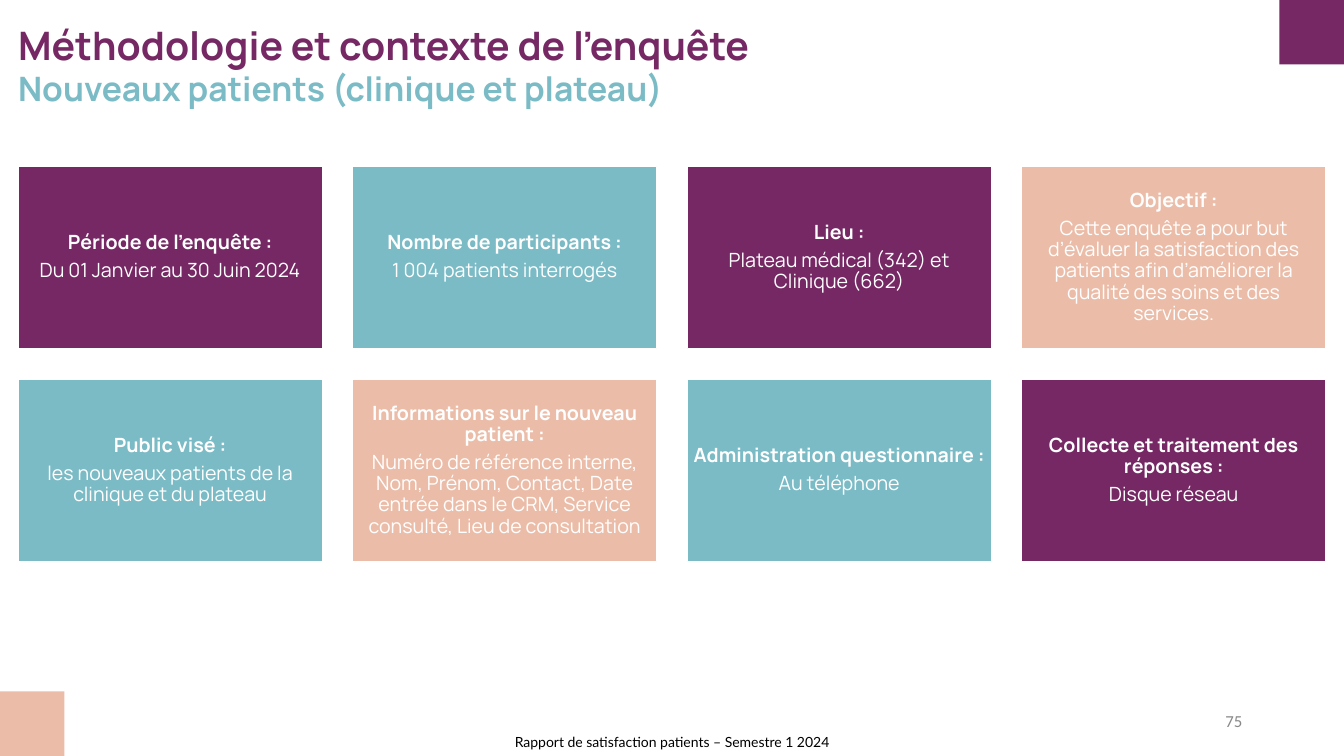
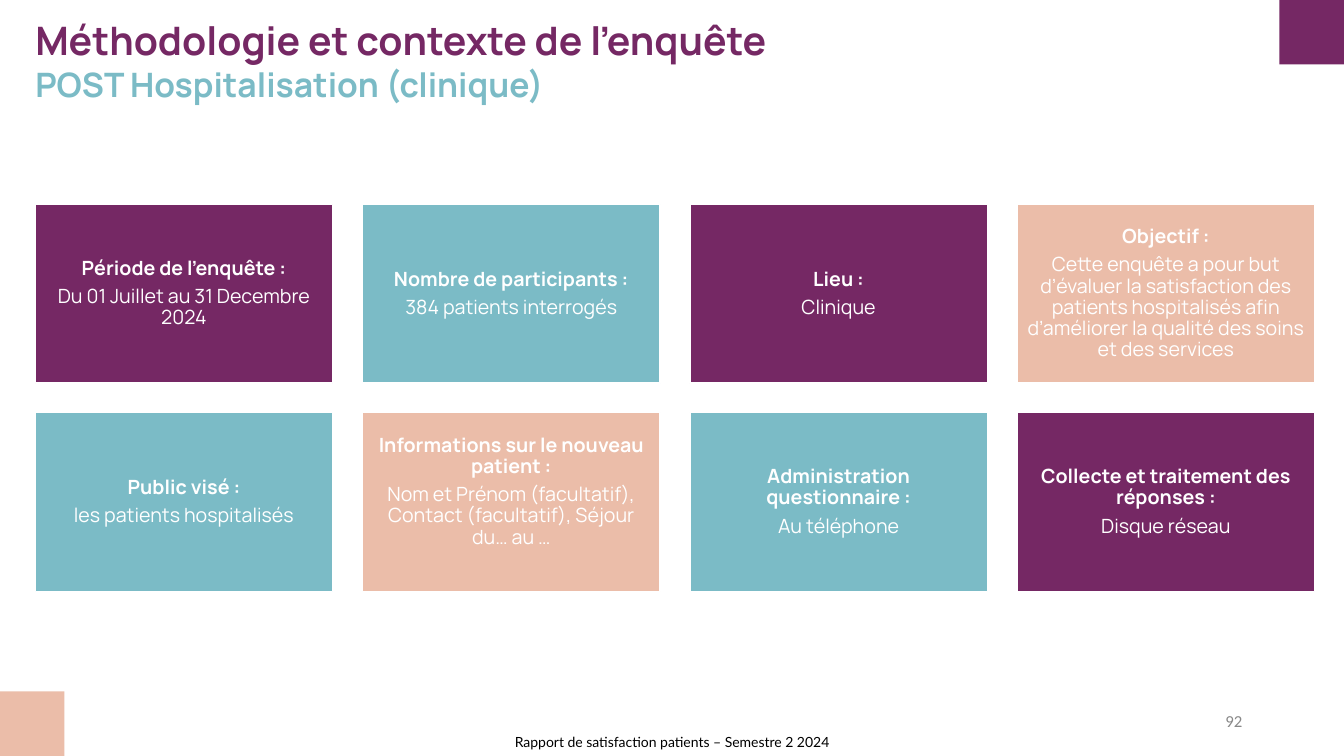
from dataclasses import dataclass

from pptx import Presentation
from pptx.dml.color import RGBColor
from pptx.enum.shapes import MSO_SHAPE
from pptx.enum.text import MSO_ANCHOR, PP_ALIGN
from pptx.util import Inches, Pt


@dataclass(frozen=True)
class Theme:
    plum: str = "752864"
    teal: str = "7BBBC6"
    salmon: str = "EBBDA9"
    white: str = "FFFFFF"
    black: str = "000000"
    grey: str = "888888"
    main_font: str = "Manrope"
    footer_font: str = "Lato"
    number_font: str = "Calibri"
    title: int = 28
    subtitle: int = 24
    card: int = 14
    number: int = 12
    footer: int = 10


T = Theme()
WIDTH, HEIGHT = 13.33, 7.5
CORNER = 0.64
COLUMNS = 4
GAP_SHARE = 0.1      # gap as a share of card width
CARD_RATIO = 0.6     # card height as a share of card width
CARD_INSET = 0.06

CARD_STYLES = [
    ("Période de l’enquête :", T.plum),
    ("Nombre de participants :", T.teal),
    ("Lieu :", T.plum),
    ("Objectif :", T.salmon),
    ("Public visé :", T.teal),
    ("Informations sur le nouveau patient :", T.salmon),
    ("Administration questionnaire :", T.teal),
    ("Collecte et traitement des réponses :", T.plum),
]

SLIDES = [
    dict(
        subtitle="Nouveaux patients (clinique et plateau)",
        title_at=(0.18, 0.2), cards_at=(0.18, 1.65), cards_width=12.97,
        footer="Rapport de satisfaction patients – Semestre 1 2024", number=75,
        bodies=[
            "Du 01 Janvier au 30 Juin 2024",
            "1 004 patients interrogés",
            "Plateau médical (342) et Clinique (662)",
            "Cette enquête a pour but d’évaluer la satisfaction des patients "
            "afin d’améliorer la qualité des soins et des services.",
            "les nouveaux patients de la clinique et du plateau",
            "Numéro de référence interne, Nom, Prénom, Contact, Date entrée "
            "dans le CRM, Service consulté, Lieu de consultation",
            "Au téléphone",
            "Disque réseau",
        ],
    ),
    dict(
        subtitle="POST Hospitalisation (clinique)",
        title_at=(0.35, 0.16), cards_at=(0.35, 2.03), cards_width=12.69,
        footer="Rapport de satisfaction patients – Semestre 2 2024", number=92,
        bodies=[
            "Du 01 Juillet au 31 Decembre 2024",
            "384 patients interrogés",
            "Clinique",
            "Cette enquête a pour but d’évaluer la satisfaction des patients "
            "hospitalisés afin d’améliorer la qualité des soins et des services",
            "les patients hospitalisés",
            "Nom et Prénom (facultatif), Contact (facultatif), Séjour du… au …",
            "Au téléphone",
            "Disque réseau",
        ],
        raised={5: 0.2},
    ),
]


def set_frame(tf, anchor, insets):
    """Wrap the frame; insets are left, top, right, bottom in inches."""
    tf.word_wrap = True
    tf.vertical_anchor = anchor
    (tf.margin_left, tf.margin_top,
     tf.margin_right, tf.margin_bottom) = map(Inches, insets)


def write(tf, text, *, size, color, font=T.main_font, bold=False,
          align=PP_ALIGN.LEFT, spacing=1.0, before=0):
    """Fill the first paragraph if it is free, otherwise append one."""
    p = tf.paragraphs[0]
    if p.runs:
        p = tf.add_paragraph()
    p.alignment, p.line_spacing = align, spacing
    p.space_before = Pt(before)
    r = p.add_run()
    r.text = text
    r.font.name, r.font.size, r.font.bold = font, Pt(size), bold
    r.font.color.rgb = RGBColor.from_string(color)


def add_rect(s, x, y, w, h, fill, line=None):
    sp = s.shapes.add_shape(MSO_SHAPE.RECTANGLE, *map(Inches, (x, y, w, h)))
    sp.shadow.inherit = False
    sp.fill.solid()
    sp.fill.fore_color.rgb = RGBColor.from_string(fill)
    if line:
        sp.line.color.rgb = RGBColor.from_string(line)
        sp.line.width = Pt(1)
    else:
        sp.line.fill.background()
    return sp


def add_label(s, box, anchor, text, **style):
    tf = s.shapes.add_textbox(*map(Inches, box)).text_frame
    set_frame(tf, anchor, (0.1, 0.05, 0.1, 0.05))
    write(tf, text, **style)


def place_title(s, x, y, subtitle):
    sp = s.shapes.title
    sp.left, sp.top, sp.width, sp.height = map(Inches, (x, y, 12.69, 0.88))
    tf = sp.text_frame
    set_frame(tf, MSO_ANCHOR.MIDDLE, (0, 0, 0, 0))
    write(tf, "Méthodologie et contexte de l’enquête",
          size=T.title, color=T.plum, bold=True)
    write(tf, subtitle, size=T.subtitle, color=T.teal, bold=True)


def add_corners(s):
    add_rect(s, WIDTH - CORNER, 0, CORNER, CORNER, T.plum)
    add_rect(s, 0, HEIGHT - CORNER, CORNER, CORNER, T.salmon)


def add_card(s, x, y, w, h, heading, body, fill, raised=0):
    tf = add_rect(s, x, y, w, h, fill, line=T.white).text_frame
    set_frame(tf, MSO_ANCHOR.MIDDLE, [CARD_INSET] * 3 + [CARD_INSET + raised])
    style = dict(size=T.card, color=T.white, align=PP_ALIGN.CENTER, spacing=0.9)
    write(tf, heading, bold=True, **style)
    write(tf, body, before=4.9, **style)


def add_card_grid(s, x, y, width, bodies, raised):
    w = width / (COLUMNS + (COLUMNS - 1) * GAP_SHARE)
    h, gap = w * CARD_RATIO, w * GAP_SHARE
    for i, ((heading, fill), body) in enumerate(zip(CARD_STYLES, bodies)):
        row, col = divmod(i, COLUMNS)
        add_card(s, x + col * (w + gap), y + row * (h + gap), w, h,
                 heading, body, fill, raised.get(i, 0))


def add_footer(s, text, number):
    add_label(s, (WIDTH / 4, 7.23, WIDTH / 2, 0.27), MSO_ANCHOR.TOP, text,
              size=T.footer, color=T.black, font=T.footer_font,
              align=PP_ALIGN.CENTER)
    add_label(s, (9.42, 6.95, 3, 0.4), MSO_ANCHOR.MIDDLE, str(number),
              size=T.number, color=T.grey, font=T.number_font,
              align=PP_ALIGN.RIGHT)


def add_method_slide(prs, *, subtitle, title_at, cards_at, cards_width,
                     footer, number, bodies, raised=None):
    s = prs.slides.add_slide(prs.slide_layouts.get_by_name("Title Only"))
    place_title(s, *title_at, subtitle)
    add_corners(s)
    add_card_grid(s, *cards_at, cards_width, bodies, raised or {})
    add_footer(s, footer, number)


def main():
    prs = Presentation()
    prs.slide_width, prs.slide_height = Inches(WIDTH), Inches(HEIGHT)
    for content in SLIDES:
        add_method_slide(prs, **content)
    prs.save("out.pptx")


if __name__ == "__main__":
    main()
